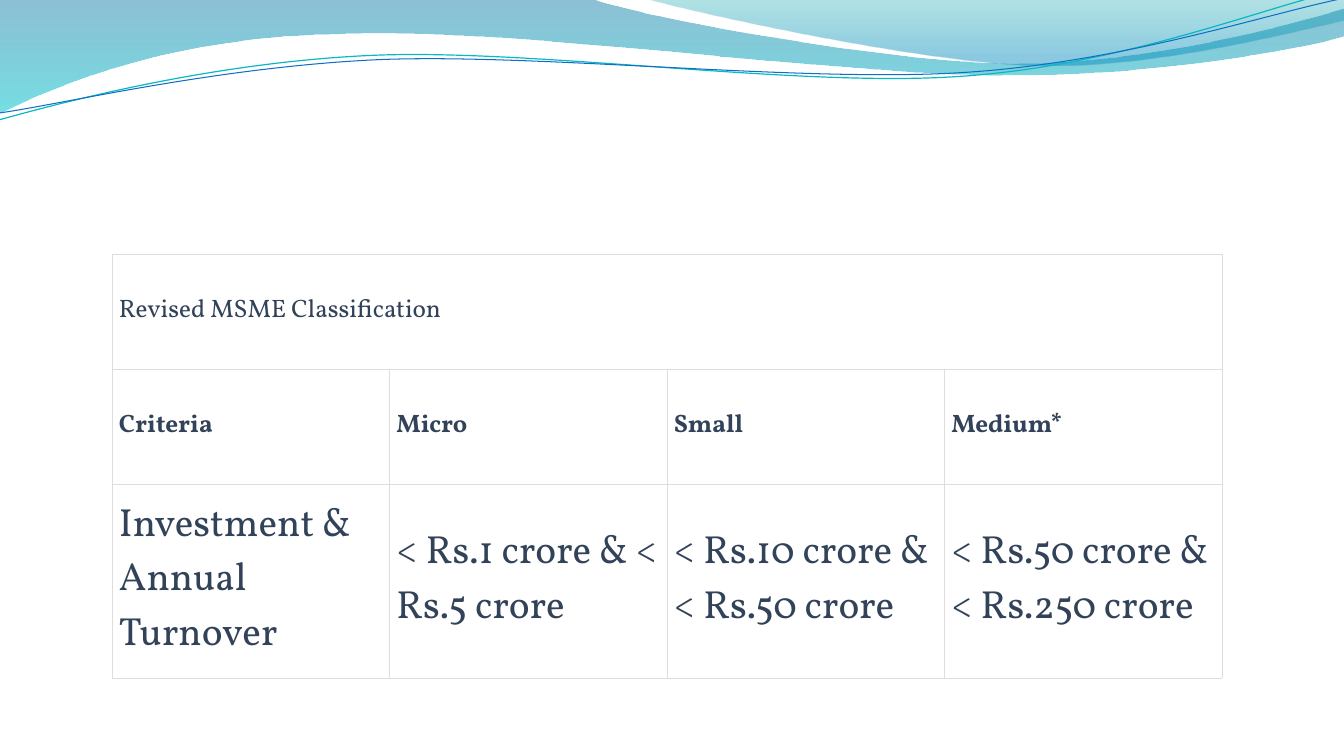
from math import cos, radians, sin

from lxml import etree
from pptx import Presentation
from pptx.dml.color import RGBColor
from pptx.enum.text import MSO_ANCHOR
from pptx.oxml.ns import qn
from pptx.util import Pt

MIDDLE = MSO_ANCHOR.MIDDLE
BLANK_LAYOUT = 6

INK = RGBColor(0x31, 0x42, 0x59)
GRID = RGBColor(0xDD, 0xDD, 0xDD)
DEEP_BLUE = RGBColor(0x00, 0x74, 0xA1)
CYAN = RGBColor(0x00, 0xC6, 0xCF)
TEAL = RGBColor(0x00, 0xA1, 0xA9)
SKY = RGBColor(0x00, 0x8B, 0xBF)
LINE_TEAL = RGBColor(0x0A, 0xB8, 0xBF)
LINE_BLUE = RGBColor(0x0F, 0x6F, 0xC6)

# Wave outlines: a pair is a straight step, a sextet a Bézier curve
BROAD_WAVE = [
    (0, 0), (422.6, -0.7),
    (456.5, 12.2, 637.2, 45.4, 727.9, 45.4),
    (819.4, 45.4, 920.2, 18.7, 959.8, 6.5),
    (961.2, 25.9),
    (943.9, 31.7, 835.2, 54.7, 715.7, 54),
    (596.9, 54, 366.5, 20.2, 247, 24.5),
    (123.8, 25.9, 43.9, 59.8, -0.7, 81.4),
]
RIGHT_WAVE = [
    (460.1, -0.7),
    (488.9, 7.9, 654.5, 44.6, 738, 46.8),
    (821.5, 49.7, 923, 23, 959.8, 15.1),
    (959.8, 0),
]
TEAL_CURVE = [
    (-0.7, 85.7),
    (46.1, 72.7, 151.9, 44.6, 265.7, 39.6),
    (379.4, 34.6, 568.8, 62.6, 684, 54.7),
    (799.2, 47.5, 901.4, 5.8, 958.3, -7.2),
]
BLUE_CURVE = [
    (0, 80.6),
    (45.4, 74.2, 157, 47.5, 272.2, 42.5),
    (386.6, 38.2, 573.1, 59, 687.6, 51.8),
    (802.8, 44.6, 903.6, 10.1, 960.5, -1.4),
]
CURVE_CENTER = (479.5, 42)
CURVE_TILT = -2.7

# Table rows: height, font format, texts
CLASSIFICATION = [
    (82.2, {"size": Pt(18), "bold": False}, ["Revised MSME Classification"]),
    (82.2, {"size": Pt(18), "bold": True}, ["Criteria", "Micro", "Small", "Medium*"]),
    (138.5, {"size": Pt(28), "bold": False}, [
        "Investment & Annual Turnover",
        "< Rs.1 crore & < Rs.5 crore",
        "< Rs.10 crore & < Rs.50 crore",
        "< Rs.50 crore & < Rs.250 crore",
    ]),
]


def level(point):
    """Take the tilt out of a point on one of the thin curves."""
    angle = radians(-CURVE_TILT)
    x, y = (value - middle for value, middle in zip(point, CURVE_CENTER))
    return (CURVE_CENTER[0] + x * cos(angle) - y * sin(angle),
            CURVE_CENTER[1] + x * sin(angle) + y * cos(angle))


class Painter:
    font = "Vollkorn"
    ink = INK
    inset = Pt(4.8)

    def __init__(self, page):
        self.page = page

    def outline(self, steps, close, tilt=0):
        points = [step[i:i + 2] for step in steps for i in range(0, len(step), 2)]
        if tilt:
            points = [level(point) for point in points]
        points = [(Pt(x), Pt(y)) for x, y in points]
        builder = self.page.shapes.build_freeform(*points[0])
        builder.add_line_segments(points[1:], close=close)
        shape = builder.convert_to_shape()
        shape.shadow.inherit = False
        shape.rotation = tilt
        # Join each three segments of a sextet into one Bézier curve
        segments = iter(list(shape._element.spPr.iter(qn("a:lnTo"))))
        for step in steps[1:]:
            first = next(segments)
            if len(step) == 6:
                bezier = etree.Element(qn("a:cubicBezTo"))
                first.addprevious(bezier)
                for segment in (first, next(segments), next(segments)):
                    bezier.append(segment[0])
                    segment.getparent().remove(segment)
        return shape

    def wave(self, steps, stops):
        """Fill an outline from top to bottom; stops are (position, colour, opacity %)."""
        shape = self.outline(steps, True)
        shape.line.fill.background()
        shape.fill.gradient()
        shape.fill.gradient_angle = 270
        for stop, (position, color, _) in zip(shape.fill.gradient_stops, stops):
            stop.position = position
            stop.color.rgb = color
        colors = shape._element.spPr.iter(qn("a:srgbClr"))
        for node, (_, _, opacity) in zip(colors, stops):
            etree.SubElement(node, qn("a:alpha"), val=str(opacity * 1000))

    def curve(self, steps, color, width):
        shape = self.outline(steps, False, CURVE_TILT)
        shape.fill.background()
        shape.line.color.rgb = color
        shape.line.width = Pt(width)

    def borders(self, cell, color, width):
        properties = cell._tc.get_or_add_tcPr()
        for side in ("a:lnL", "a:lnR", "a:lnT", "a:lnB"):
            line = etree.SubElement(properties, qn(side), w=str(Pt(width)))
            fill = etree.SubElement(line, qn("a:solidFill"))
            etree.SubElement(fill, qn("a:srgbClr"), val=str(color))

    def cell(self, cell, text, font_format):
        layout = {"vertical_anchor": MIDDLE, "margin_left": self.inset,
                  "margin_right": self.inset, "margin_top": self.inset,
                  "margin_bottom": self.inset}
        for name, value in layout.items():
            setattr(cell, name, value)
        span = cell.text_frame.paragraphs[0].add_run()
        span.text = text
        for name, value in {"name": self.font, **font_format}.items():
            setattr(span.font, name, value)
        span.font.color.rgb = self.ink

    def table(self, left, top, width, rows):
        columns = max(len(texts) for _, _, texts in rows)
        height = sum(row_height for row_height, _, _ in rows)
        table = self.page.shapes.add_table(
            len(rows), columns, Pt(left), Pt(top), Pt(width), Pt(height)).table
        table.first_row = table.horz_banding = False
        for cell in table.iter_cells():
            self.borders(cell, GRID, 0.5)
            cell.fill.background()
        for index, (row_height, font_format, texts) in enumerate(rows):
            table.rows[index].height = Pt(row_height)
            if len(texts) == 1:
                table.cell(index, 0).merge(table.cell(index, columns - 1))
            for column, text in enumerate(texts):
                self.cell(table.cell(index, column), text, font_format)


def main():
    deck = Presentation()
    deck.slide_width, deck.slide_height = Pt(960), Pt(540)
    painter = Painter(deck.slides.add_slide(deck.slide_layouts[BLANK_LAYOUT]))

    # Wave banner
    painter.wave(BROAD_WAVE, [(0, DEEP_BLUE, 45), (1, CYAN, 55)])
    painter.wave(RIGHT_WAVE, [(0, TEAL, 30), (0.8, SKY, 45)])
    painter.curve(TEAL_CURVE, LINE_TEAL, 0.85)
    painter.curve(BLUE_CURVE, LINE_BLUE, 0.75)

    # Classification table
    painter.table(80.2, 181.4, 792.8, CLASSIFICATION)

    deck.save("out.pptx")


if __name__ == "__main__":
    main()
